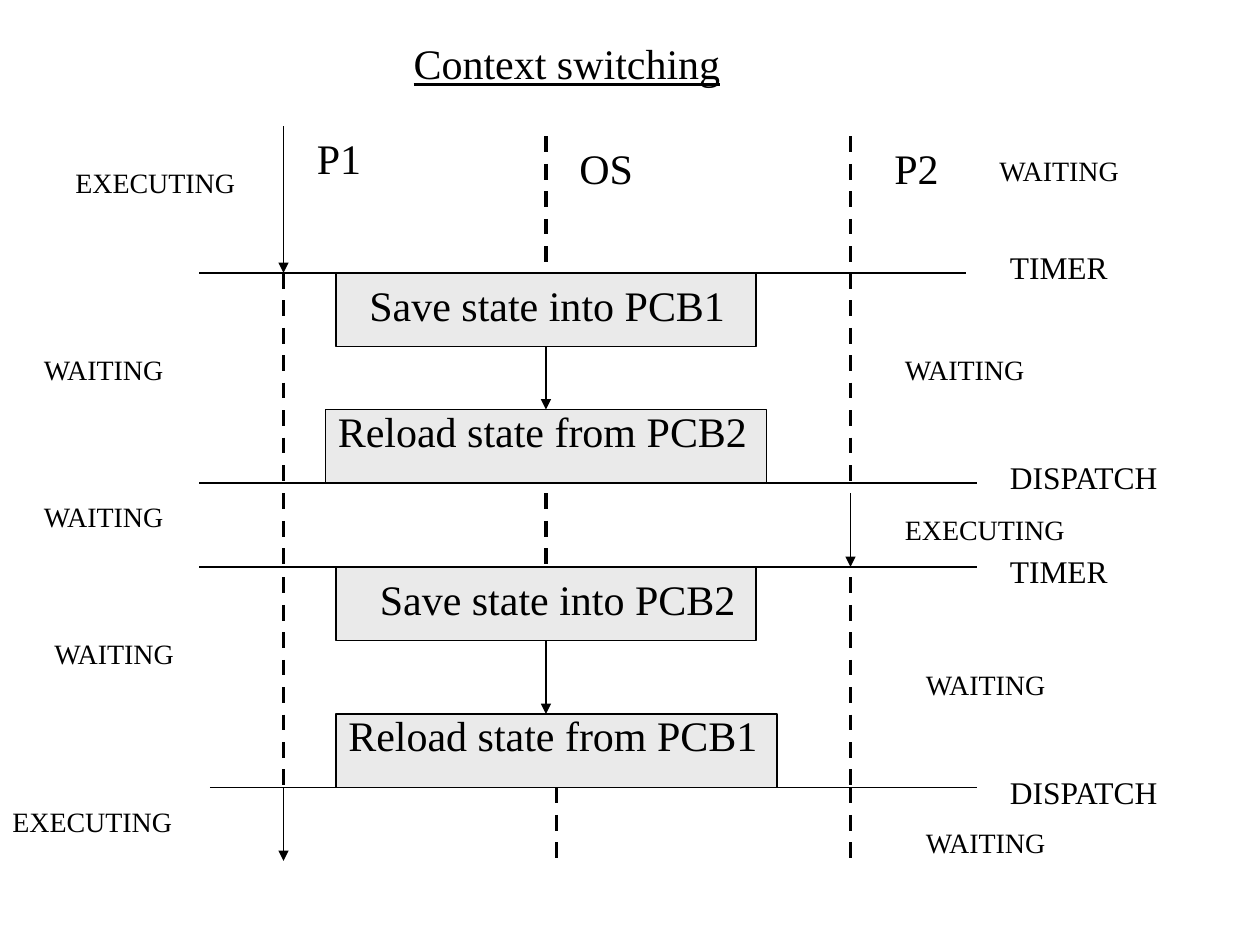
from dataclasses import dataclass

from lxml import etree
from pptx import Presentation
from pptx.dml.color import RGBColor
from pptx.enum.dml import MSO_LINE
from pptx.enum.shapes import MSO_CONNECTOR, MSO_SHAPE
from pptx.enum.text import MSO_ANCHOR, PP_ALIGN
from pptx.oxml.ns import qn
from pptx.util import Inches, Pt

STRAIGHT = MSO_CONNECTOR.STRAIGHT
RECTANGLE = MSO_SHAPE.RECTANGLE
DASH = MSO_LINE.DASH
TOP = MSO_ANCHOR.TOP
LEFT, CENTER = PP_ALIGN.LEFT, PP_ALIGN.CENTER

COLUMNS, ROWS = 120, 90
CELL = Inches(10) / COLUMNS
P1, OS, P2 = 27, 52, 81
BOX_ROWS = 7
TITLE_LAYOUT = 5


@dataclass(frozen=True)
class Theme:
    """Colours, font, type sizes and line widths of the slide."""

    ink: RGBColor = RGBColor(0, 0, 0)
    box: RGBColor = RGBColor(0xEA, 0xEA, 0xEA)
    font: str = "Times New Roman"
    heading: int = 24
    event: int = 18
    status: int = 16
    thin: float = 0.75
    thick: float = 2.25


THEME = Theme()


@dataclass(frozen=True)
class Region:
    """A box on the slide grid, in columns and rows."""

    slide: object
    left: float
    top: float
    columns: float
    rows: float

    def place(self, column, row):
        """Return the slide position of a cell of this region."""
        return round((self.left + column) * CELL), round((self.top + row) * CELL)


def write_text(shape, text, size=THEME.status, align=LEFT, underline=False):
    """Put one formatted paragraph into a shape."""
    frame = shape.text_frame
    frame.word_wrap = True
    frame.vertical_anchor = TOP
    frame.text = text
    paragraph = frame.paragraphs[0]
    paragraph.alignment = align
    paragraph.space_before = Pt(0)
    font = paragraph.runs[0].font
    font.name, font.size, font.underline = THEME.font, Pt(size), underline
    font.color.rgb = THEME.ink


def add_label(region, text, column, row, columns=15, size=THEME.status):
    """Add a text box at a cell of the region."""
    height = Inches(0.1) + Pt(size * 1.2)
    box = region.slide.shapes.add_textbox(
        *region.place(column, row), round(columns * CELL), height
    )
    write_text(box, text, size=size)


def add_line(region, start, end, dashed=False, arrow=False):
    """Draw a line between two cells of the region."""
    line = region.slide.shapes.add_connector(
        STRAIGHT, *region.place(*start), *region.place(*end)
    )
    line.line.color.rgb = THEME.ink
    line.line.width = Pt(THEME.thick if dashed else THEME.thin)
    if dashed:
        line.line.dash_style = DASH
    properties = line._element.spPr
    if arrow:
        outline = properties.find(qn("a:ln"))
        etree.SubElement(outline, qn("a:tailEnd"), type="triangle")
    etree.SubElement(properties, qn("a:effectLst"))


def add_box(region, column, row, columns):
    """Draw a grey step box at a cell of the region."""
    box = region.slide.shapes.add_shape(
        RECTANGLE,
        *region.place(column, row),
        round(columns * CELL),
        round(BOX_ROWS * CELL),
    )
    box.shadow.inherit = False
    box.fill.solid()
    box.fill.fore_color.rgb = THEME.box
    box.line.color.rgb = THEME.ink
    box.line.width = Pt(THEME.thin)


def draw_title(region, text):
    """Move the title placeholder into the region and fill it."""
    title = region.slide.shapes.title
    title.left, title.top = region.place(0, 0)
    title.width, title.height = round(region.columns * CELL), round(region.rows * CELL)
    write_text(title, text, size=THEME.heading, align=CENTER, underline=True)


def draw_header(region):
    """Draw the named lifelines while P1 runs."""
    for column in (OS, P2):
        add_line(region, (column, 1), (column, region.rows), dashed=True)
    add_line(region, (P1, 0), (P1, region.rows), arrow=True)
    for text, column, row in (("P1", 29, 0), ("OS", 54, 1), ("P2", 84, 1)):
        add_label(region, text, column, row, columns=12, size=THEME.heading)
    add_label(region, "EXECUTING", 6, 3.2, columns=22)
    add_label(region, "WAITING", 94, 2)


def draw_switch(region, saved, loaded, shift, label_lift, waiting):
    """Draw one switch from the timer to the dispatch of the other process."""
    bottom = region.rows
    reload_row = bottom - BOX_ROWS
    for column in (P1, P2):
        add_line(region, (column, shift), (column, bottom), dashed=True)
    add_line(region, (19, 0), (92 + shift, 0))
    add_line(region, (19 + shift, bottom), (93, bottom))
    add_box(region, 32, 0, 40)
    add_box(region, 31 + shift, reload_row, 42)
    add_line(region, (OS, BOX_ROWS), (OS, reload_row), arrow=True)
    steps = (
        (f"Save state into {saved}", 34 + shift, 0),
        (f"Reload state from {loaded}", 31 + shift, reload_row - 1),
    )
    for text, column, row in steps:
        add_label(region, text, column, row, columns=49, size=THEME.heading)
    for text, row in (("TIMER", 0), ("DISPATCH", bottom)):
        add_label(region, text, 95, row - label_lift, columns=25, size=THEME.event)
    for column, row in waiting:
        add_label(region, "WAITING", column, row)


def draw_p2_turn(region):
    """Draw the lifelines while P2 runs."""
    add_line(region, (P1, 1), (P1, region.rows), dashed=True)
    add_line(region, (OS, 1), (OS, region.rows + 1), dashed=True)
    add_line(region, (P2, 1), (P2, region.rows), arrow=True)
    add_label(region, "WAITING", 3, 1)
    add_label(region, "EXECUTING", 85, 2.2, columns=22)


def draw_p1_turn(region):
    """Draw the lifelines once P1 runs again."""
    for column in (OS + 1, P2):
        add_line(region, (column, 0), (column, region.rows), dashed=True)
    add_line(region, (P1, 0), (P1, region.rows), arrow=True)
    add_label(region, "EXECUTING", 0, 1, columns=19)
    add_label(region, "WAITING", 87, 3)


def main():
    """Build and save the presentation."""
    presentation = Presentation()
    presentation.slide_width = round(COLUMNS * CELL)
    presentation.slide_height = round(ROWS * CELL)
    layout = presentation.slide_layouts[TITLE_LAYOUT]
    slide = presentation.slides.add_slide(layout)
    draw_title(Region(slide, 26.5, 3, 55, 6), "Context switching")
    draw_header(Region(slide, 0, 12, COLUMNS, 14))
    draw_switch(
        Region(slide, 0, 26, COLUMNS, 20),
        "PCB1", "PCB2", shift=0, label_lift=3, waiting=((3, 7), (85, 7)),
    )
    draw_p2_turn(Region(slide, 0, 46, COLUMNS, 8))
    draw_switch(
        Region(slide, 0, 54, COLUMNS, 21),
        "PCB2", "PCB1", shift=1, label_lift=2, waiting=((4, 6), (87, 9)),
    )
    draw_p1_turn(Region(slide, 0, 75, COLUMNS, 7))
    presentation.save("out.pptx")


if __name__ == "__main__":
    main()
